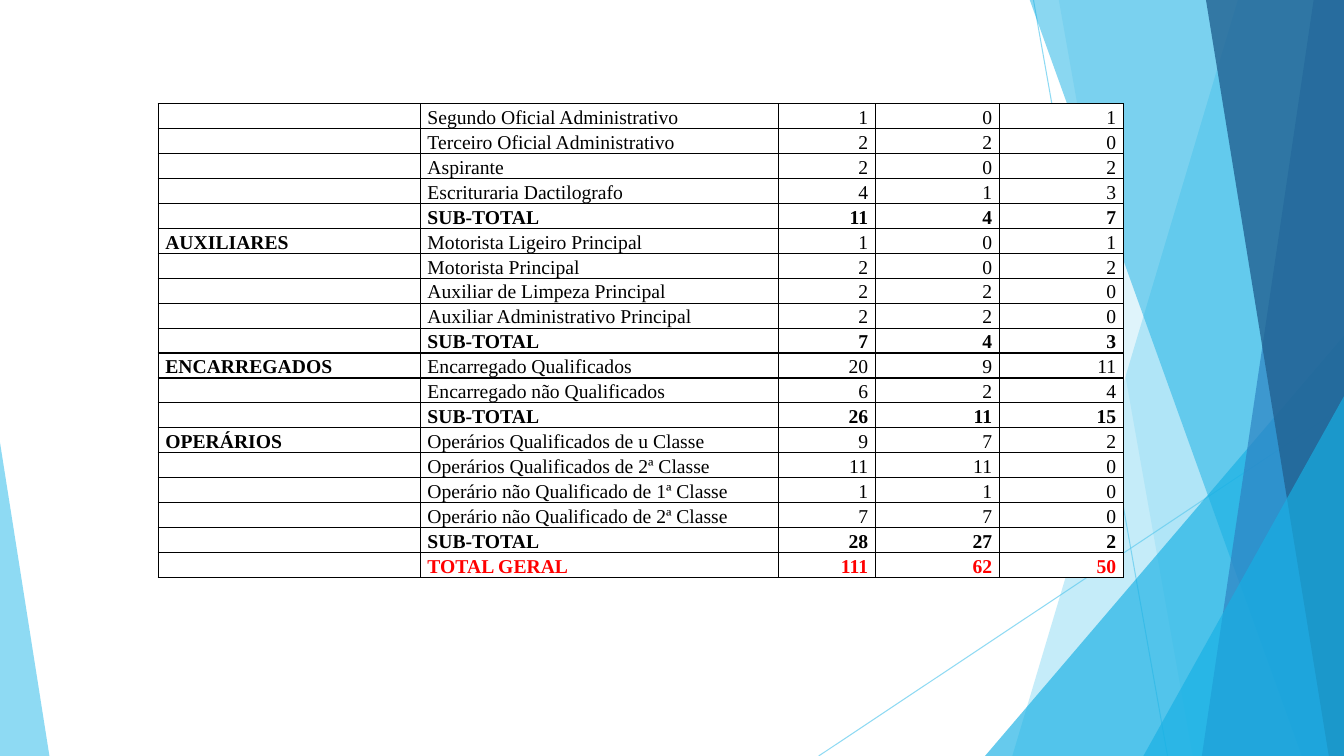
from lxml import etree
from pptx import Presentation
from pptx import util as u
from pptx.dml import color
from pptx.enum import shapes, text
from pptx.oxml import ns

WIDTH, HEIGHT = 13.33, 7.5
BLACK, WHITE, RED = "000000", "FFFFFF", "FF0000"
SKY, AZURE, BLUE, NAVY = "5FCBEF", "17B0E4", "2E83C3", "226292"

RAYS = [((10.25, 0), (11.58, 7.5)), ((13.33, 4.03), (8.12, 7.5))]
FACETS = [
    ("wedge", (12.28, 10.04), SKY, 36),
    ("wedge", (10.5, 11.83), SKY, 20),
    ("triangle", (9.77, 3.33, 3.56, 4.17, 1), AZURE, 66),
    ("wedge", (10.21, 12.91), AZURE, 50),
    ("wedge", (13.03, 11.92), BLUE, 70),
    ("wedge", (11.96, 13.18), NAVY, 80),
    ("triangle", (11.34, 3.93, 1.99, 3.57, 1), AZURE, 66),
    ("triangle", (0, 4.39, 0.49, 3.11, 0), SKY, 70),
]

COLUMNS = [2.6, 3.55, 0.96, 1.23, 1.23]
STAFF = [
    ("", "Segundo Oficial Administrativo", 1, 0, 1),
    ("", "Terceiro Oficial Administrativo", 2, 2, 0),
    ("", "Aspirante", 2, 0, 2),
    ("", "Escrituraria Dactilografo", 4, 1, 3),
    ("", "SUB-TOTAL", 11, 4, 7),
    ("AUXILIARES", "Motorista Ligeiro Principal", 1, 0, 1),
    ("", "Motorista Principal", 2, 0, 2),
    ("", "Auxiliar de Limpeza Principal", 2, 2, 0),
    ("", "Auxiliar Administrativo Principal", 2, 2, 0),
    ("", "SUB-TOTAL", 7, 4, 3),
    ("ENCARREGADOS", "Encarregado Qualificados", 20, 9, 11),
    ("", "Encarregado não Qualificados", 6, 2, 4),
    ("", "SUB-TOTAL", 26, 11, 15),
    ("OPERÁRIOS", "Operários Qualificados de u Classe", 9, 7, 2),
    ("", "Operários Qualificados de 2ª Classe", 11, 11, 0),
    ("", "Operário não Qualificado de 1ª Classe", 1, 1, 0),
    ("", "Operário não Qualificado de 2ª Classe", 7, 7, 0),
    ("", "SUB-TOTAL", 28, 27, 2),
    ("", "TOTAL GERAL", 111, 62, 50),
]


def rgb(value):
    return color.RGBColor.from_string(value)


def apply(target, values):
    for name, value in values.items():
        setattr(target, name, value)


def paint(fill, value):
    fill.solid()
    fill.fore_color.rgb = rgb(value)


def set_alpha(sp, percent):
    tint = next(sp._element.spPr.iter(ns.qn("a:srgbClr")))
    etree.SubElement(tint, ns.qn("a:alpha"), val=str(percent * 1000))


def add_ray(s, left, top, start, end):
    ends = [u.Inches(v) for v in (left + start[0], top + start[1],
                                  left + end[0], top + end[1])]
    ray = s.shapes.add_connector(shapes.MSO_CONNECTOR.STRAIGHT, *ends)
    ray.line.color.rgb = rgb(SKY)
    ray.line.width = u.Pt(0.75)
    set_alpha(ray, 70)
    etree.SubElement(ray._element.spPr, ns.qn("a:effectLst"))


def add_wedge(s, box, upper, lower):
    left, top, width, height = box
    right, bottom = left + width, top + height
    corners = [(left + upper, top - 0.01), (right, top - 0.01),
               (right, bottom), (left + lower, bottom)]
    points = [(u.Inches(x), u.Inches(y)) for x, y in corners]
    builder = s.shapes.build_freeform(*points[0], scale=1.0)
    builder.add_line_segments(points[1:], close=True)
    return builder.convert_to_shape()


def add_triangle(s, box, x, y, width, height, apex):
    place = [u.Inches(v) for v in (box[0] + x, box[1] + y, width, height)]
    sp = s.shapes.add_shape(shapes.MSO_SHAPE.ISOSCELES_TRIANGLE, *place)
    sp.adjustments[0] = apex
    return sp


def add_backdrop(s, box):
    for start, end in RAYS:
        add_ray(s, box[0], box[1], start, end)
    makers = {"wedge": add_wedge, "triangle": add_triangle}
    for kind, geometry, fill, alpha in FACETS:
        sp = makers[kind](s, box, *geometry)
        paint(sp.fill, fill)
        set_alpha(sp, alpha)
        sp.line.fill.background()
        sp.shadow.inherit = False


def add_borders(cell):
    props = cell._tc.get_or_add_tcPr()
    for i, side in enumerate(("lnL", "lnR", "lnT", "lnB")):
        ln = etree.Element(ns.qn("a:" + side), w=str(u.Pt(1)))
        fill = etree.SubElement(ln, ns.qn("a:solidFill"))
        etree.SubElement(fill, ns.qn("a:srgbClr"), val=BLACK)
        props.insert(i, ln)


def fill_cell(cell, value, align, bold, ink):
    apply(cell, {"margin_left": u.Inches(0.07), "margin_right": u.Inches(0.07),
                 "margin_top": 0, "margin_bottom": 0})
    paint(cell.fill, WHITE)
    add_borders(cell)
    p = cell.text_frame.paragraphs[0]
    if value == "":
        etree.SubElement(p._p, ns.qn("a:endParaRPr"), sz="1200")
        return
    apply(p, {"alignment": align, "line_spacing": 1.15})
    r = p.add_run()
    r.text = str(value)
    apply(r.font, {"name": "Times New Roman", "size": u.Pt(14), "bold": bold})
    r.font.color.rgb = rgb(ink)


def add_staff_table(s, box):
    place = [u.Inches(v) for v in box]
    table = s.shapes.add_table(len(STAFF), len(COLUMNS), *place).table
    apply(table, {"first_row": False, "horz_banding": False})
    for column, width in zip(table.columns, COLUMNS):
        column.width = u.Inches(width)
    for row, record in zip(table.rows, STAFF):
        row.height = u.Inches(box[3] / len(STAFF))
        total = "TOTAL" in record[1]
        ink = RED if record[1] == "TOTAL GERAL" else BLACK
        for i, (cell, value) in enumerate(zip(row.cells, record)):
            align = text.PP_ALIGN.JUSTIFY if i < 2 else text.PP_ALIGN.RIGHT
            fill_cell(cell, value, align, total or i == 0, ink)


def main():
    prs = Presentation()
    apply(prs, {"slide_width": u.Inches(WIDTH), "slide_height": u.Inches(HEIGHT)})
    s = prs.slides.add_slide(prs.slide_layouts[6])
    add_backdrop(s, (0, 0, WIDTH, HEIGHT))
    add_staff_table(s, (1.57, 1.03, sum(COLUMNS), 4.7))
    prs.save("out.pptx")


if __name__ == "__main__":
    main()
